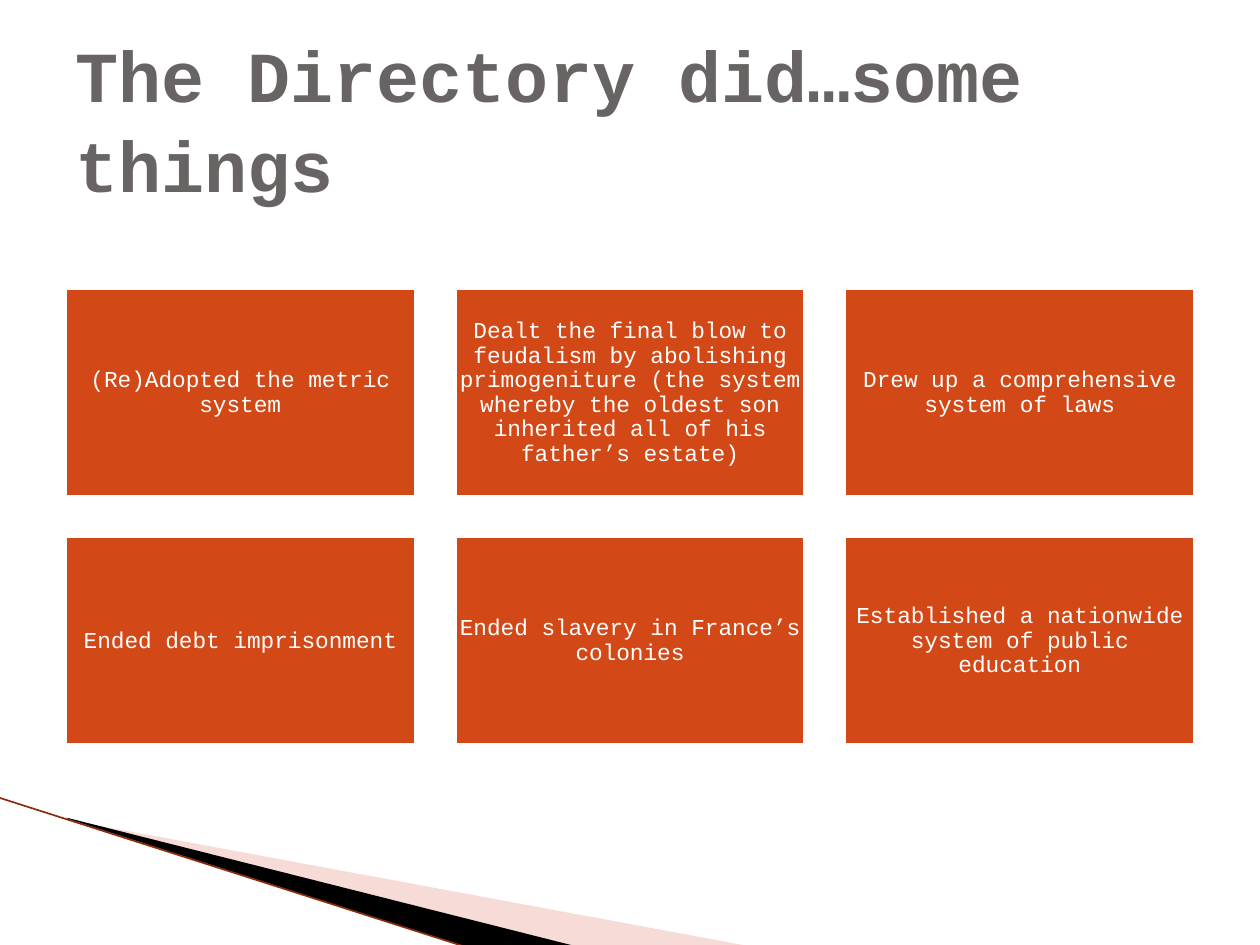
from lxml import etree
from pptx import Presentation
from pptx.dml.color import RGBColor
from pptx.enum.shapes import MSO_CONNECTOR, MSO_SHAPE
from pptx.enum.text import MSO_ANCHOR, MSO_AUTO_SIZE, PP_ALIGN
from pptx.oxml.ns import qn
from pptx.util import Inches, Pt

RECTANGLE = MSO_SHAPE.RECTANGLE
STRAIGHT = MSO_CONNECTOR.STRAIGHT
MIDDLE = MSO_ANCHOR.MIDDLE
NO_AUTOFIT = MSO_AUTO_SIZE.NONE
LEFT, CENTER = PP_ALIGN.LEFT, PP_ALIGN.CENTER

ORANGE = RGBColor(0xD3, 0x48, 0x17)
GRAY = RGBColor(0x69, 0x64, 0x64)
PINK = RGBColor(0xE9, 0xA5, 0x9D)
RUST = RGBColor(0x8C, 0x2C, 0x0C)
BLACK = RGBColor(0, 0, 0)
WHITE = RGBColor(0xFF, 0xFF, 0xFF)
FONT = "Courier New"

TITLE = "The Directory did…some things"
REFORMS = [
    "(Re)Adopted the metric system",
    "Dealt the final blow to feudalism by abolishing primogeniture "
    "(the system whereby the oldest son inherited all of his father’s estate)",
    "Drew up a comprehensive system of laws",
    "Ended debt imprisonment",
    "Ended slavery in France’s colonies",
    "Established a nationwide system of public education",
]
COLUMNS, ROWS = 3, 2


def add_run(paragraph, text, size, color, bold=False):
    run = paragraph.add_run()
    run.text = text
    font = run.font
    font.name, font.size, font.bold = FONT, Pt(size), bold
    font.color.rgb = color


def add_wedge(slide, left, top, points, color, opacity=None):
    corners = [(Inches(left + x), Inches(top + y)) for x, y in points]
    builder = slide.shapes.build_freeform(*corners[0])
    builder.add_line_segments(corners[1:], close=True)
    wedge = builder.convert_to_shape()
    wedge.shadow.inherit = False
    wedge.fill.solid()
    wedge.fill.fore_color.rgb = color
    wedge.line.fill.background()
    if opacity is not None:
        color_element = wedge.fill._xPr.find(".//" + qn("a:srgbClr"))
        alpha = etree.SubElement(color_element, qn("a:alpha"))
        alpha.set("val", str(opacity * 1000))


def add_corner_decoration(slide, left, top):
    add_wedge(slide, left, top,
              [(0.55, 0.18), (5.95, 1.18), (4.56, 1.18), (0.55, 0.17)], PINK, 40)
    add_wedge(slide, left, top,
              [(0.53, 0.16), (4.57, 1.18), (3.72, 1.19), (0.54, 0.17)], BLACK)
    edge = slide.shapes.add_connector(
        STRAIGHT, Inches(left - 0.01), Inches(top),
        Inches(left + 3.71), Inches(top + 1.19))
    edge.line.color.rgb = RUST
    edge.line.width = Pt(0.95)
    etree.SubElement(edge._element.spPr, qn("a:effectLst"))


def fill_title(slide, left, top, width, height):
    title = slide.shapes.title
    title.left, title.top = Inches(left), Inches(top)
    title.width, title.height = Inches(width), Inches(height)
    frame = title.text_frame
    frame.word_wrap = True
    frame.auto_size = NO_AUTOFIT
    frame.vertical_anchor = MIDDLE
    paragraph = frame.paragraphs[0]
    paragraph.alignment = LEFT
    paragraph.line_spacing = 1.05
    add_run(paragraph, TITLE, 41, GRAY, bold=True)


def add_reform_box(slide, left, top, width, height, text):
    box = slide.shapes.add_shape(
        RECTANGLE, Inches(left), Inches(top), Inches(width), Inches(height))
    box.shadow.inherit = False
    box.fill.solid()
    box.fill.fore_color.rgb = ORANGE
    box.line.color.rgb = WHITE
    box.line.width = Pt(4.33)
    frame = box.text_frame
    frame.word_wrap = True
    frame.vertical_anchor = MIDDLE
    frame.margin_left = frame.margin_right = Inches(0.04)
    frame.margin_top = frame.margin_bottom = Inches(0.05)
    paragraph = frame.paragraphs[0]
    paragraph.alignment = CENTER
    paragraph.line_spacing = 0.9
    add_run(paragraph, text, 13, WHITE)


def add_reform_grid(slide, left, top, width, height, gap):
    box_width = (width - gap * (COLUMNS - 1)) / COLUMNS
    box_height = (height - gap * (ROWS - 1)) / ROWS
    for index, text in enumerate(REFORMS):
        row, column = divmod(index, COLUMNS)
        add_reform_box(slide, left + column * (box_width + gap),
                       top + row * (box_height + gap), box_width, box_height, text)


def main():
    presentation = Presentation()
    presentation.slide_width, presentation.slide_height = Inches(10), Inches(7.5)
    slide = presentation.slides.add_slide(presentation.slide_layouts[5])
    add_corner_decoration(slide, 0, 6.33)
    fill_title(slide, 0.5, 0.3, 9, 1.25)
    add_reform_grid(slide, 0.5, 2.27, 9, 3.66, 0.28)
    presentation.save("out.pptx")


if __name__ == "__main__":
    main()
